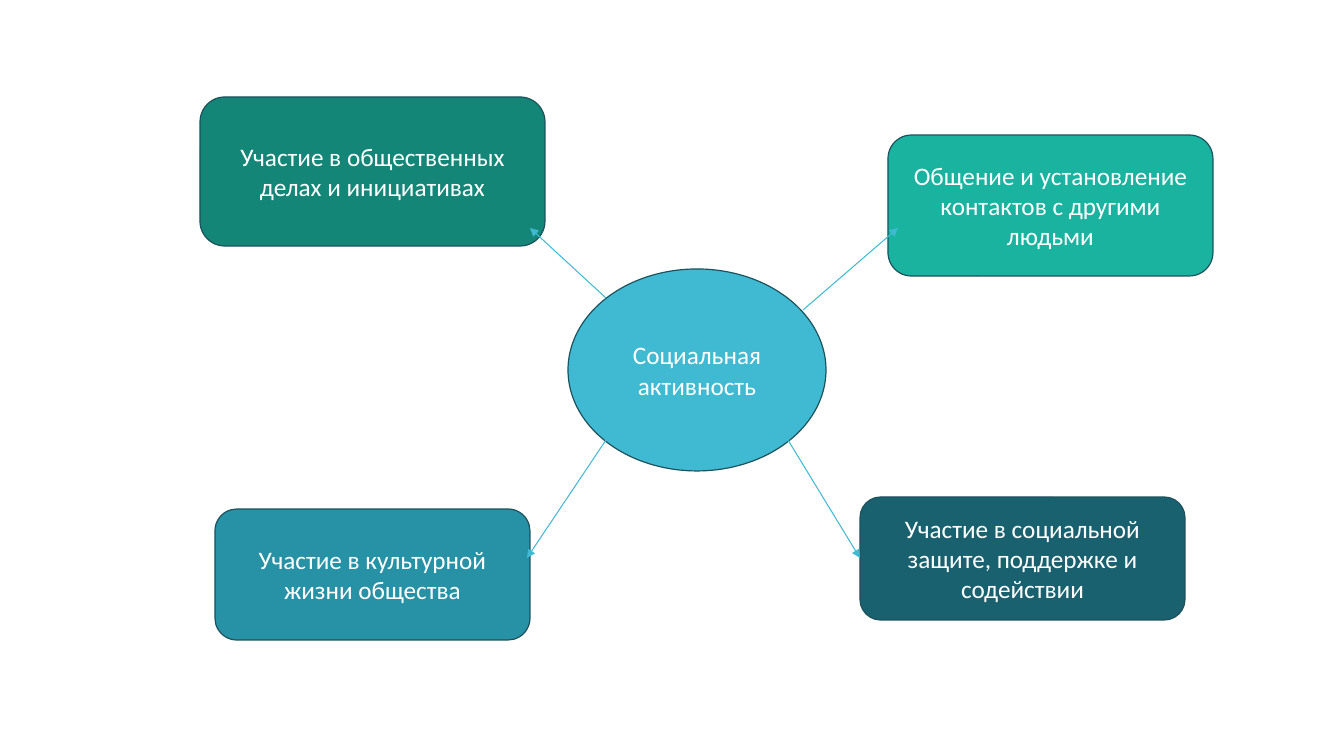
from lxml.etree import SubElement
from pptx import Presentation
from pptx.dml.color import RGBColor
from pptx.enum.shapes import MSO_CONNECTOR, MSO_SHAPE
from pptx.enum.text import MSO_ANCHOR, PP_ALIGN
from pptx.oxml.ns import qn
from pptx.util import Emu, Pt

PX = 914400 / 100.8
SKY = RGBColor(0x40, 0xBA, 0xD2)
MINT = RGBColor(0x1A, 0xB3, 0x9F)
PETROL = RGBColor(0x1A, 0x61, 0x6F)
BLUE = RGBColor(0x27, 0x91, 0xA6)
GREEN = RGBColor(0x13, 0x86, 0x77)
OUTLINE = RGBColor(0x1C, 0x52, 0x5C)
WHITE = RGBColor(0xFF, 0xFF, 0xFF)


def px(*lengths):
    return [Emu(round(length * PX)) for length in lengths]


def add_node(text, *, box, fill, kind=MSO_SHAPE.ROUNDED_RECTANGLE, size=18):
    shape = slide.shapes.add_shape(kind, *px(*box))
    shape.shadow.inherit = False
    shape.fill.solid()
    shape.fill.fore_color.rgb = fill
    shape.line.color.rgb = OUTLINE
    shape.line.width = Pt(0.85)
    frame = shape.text_frame
    frame.word_wrap = True
    frame.vertical_anchor = MSO_ANCHOR.MIDDLE
    paragraph = frame.paragraphs[0]
    paragraph.alignment = PP_ALIGN.CENTER
    run = paragraph.add_run()
    run.text = text
    run.font.name = "Calibri"
    run.font.size = Pt(size)
    run.font.color.rgb = WHITE


presentation = Presentation()
presentation.slide_width, presentation.slide_height = px(1344, 756)
slide = presentation.slides.add_slide(presentation.slide_layouts[6])

# Central topic
add_node("Социальная активность", box=(568, 269, 258, 202), fill=SKY,
         kind=MSO_SHAPE.OVAL)

# Surrounding forms of activity
activities = [
    ("Общение и установление контактов с другими людьми", (888, 135, 325, 141), MINT),
    ("Участие в социальной защите, поддержке и содействии", (860, 497, 325, 123), PETROL),
    ("Участие в культурной жизни общества", (215, 509, 315, 131), BLUE),
    ("Участие в общественных делах и инициативах", (200, 97, 345, 149), GREEN),
]
for text, box, fill in activities:
    add_node(text, box=box, fill=fill)

# Arrows from the topic to the activities
arrows = [
    (788, 440, 860, 558),
    (606, 440, 527, 558),
    (606, 298, 530, 228),
    (803, 310, 898, 228),
]
for ends in arrows:
    arrow = slide.shapes.add_connector(MSO_CONNECTOR.STRAIGHT, *px(*ends))
    arrow.line.color.rgb = SKY
    arrow.line.width = Pt(0.75)
    SubElement(arrow.line._get_or_add_ln(), qn("a:tailEnd"), type="triangle")
    SubElement(arrow._element.spPr, qn("a:effectLst"))

presentation.save("out.pptx")
